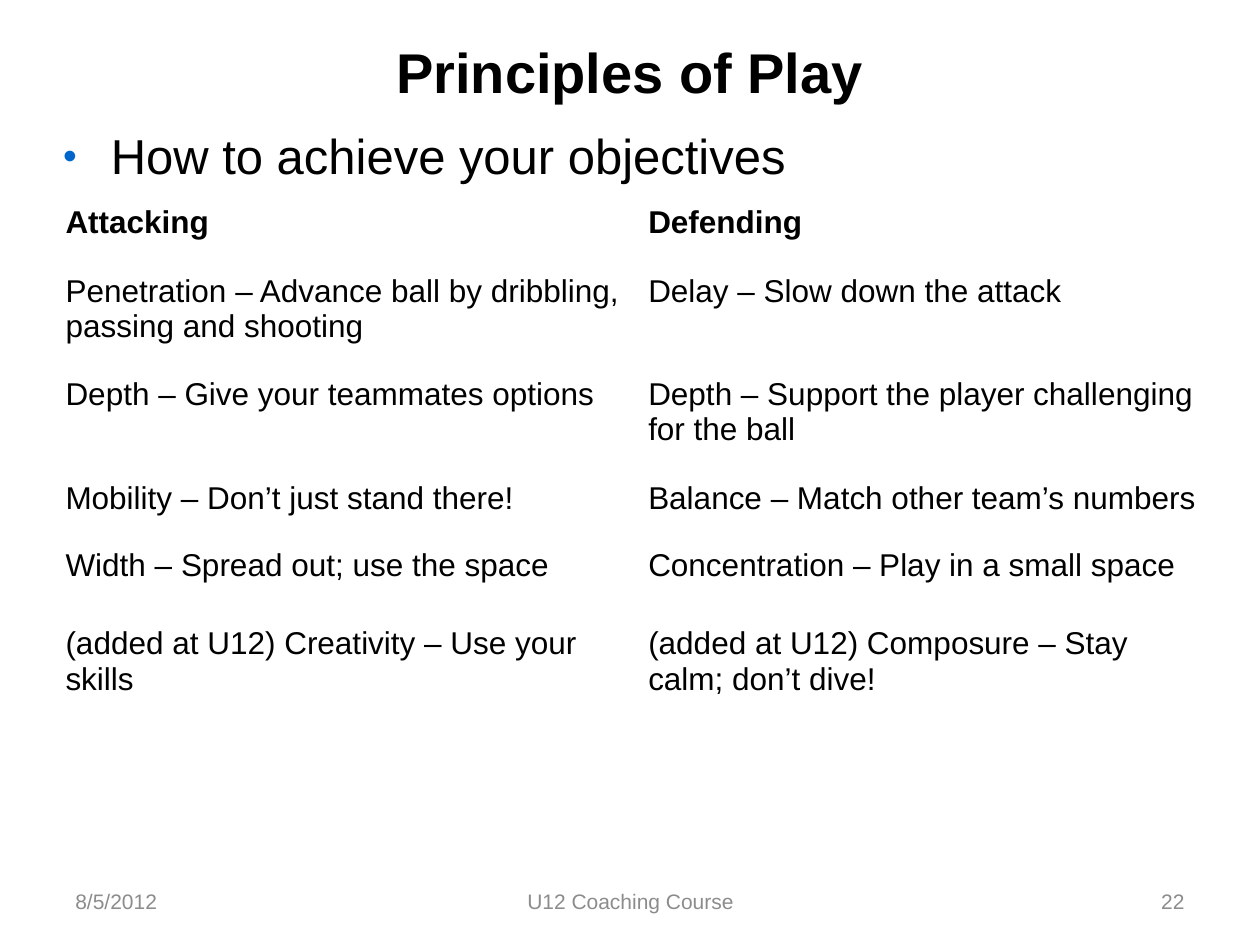
from lxml import etree
from pptx import Presentation
from pptx.dml.color import RGBColor
from pptx.enum.text import MSO_ANCHOR, PP_ALIGN
from pptx.oxml.ns import qn
from pptx.util import Inches, Pt

BLACK = RGBColor(0x00, 0x00, 0x00)
WHITE = RGBColor(0xFF, 0xFF, 0xFF)
GRAY = RGBColor(0x8C, 0x8C, 0x8C)
BLUE = RGBColor(0x00, 0x66, 0xCC)

TITLE = {"size": Pt(32), "bold": True}
BODY = {"size": Pt(28)}
HEADING = {"size": Pt(18), "bold": True}
CELL = {"size": Pt(18), "bold": False}
FOOTER = {"size": Pt(12)}

# Top, height, attacking text, defending text, text format
PRINCIPLES = [
    (1.58, 0.41, "Attacking", "Defending", HEADING),
    (2.12, 0.7, "Penetration – Advance ball by dribbling, passing and shooting",
     "Delay – Slow down the attack", CELL),
    (2.94, 0.7, "Depth – Give your teammates options",
     "Depth – Support the player challenging for the ball", CELL),
    (3.77, 0.41, "Mobility – Don’t just stand there!",
     "Balance – Match other team’s numbers", CELL),
    (4.3, 0.41, "Width – Spread out; use the space",
     "Concentration – Play in a small space", CELL),
    (4.92, 0.7, "(added at U12) Creativity – Use your skills",
     "(added at U12) Composure – Stay calm; don’t dive!", CELL),
]
BORDERS = {"a:lnL": 1, "a:lnR": 1, "a:lnT": 1, "a:lnB": 3}


def format_font(paragraph, values, color=BLACK):
    paragraph.font.name = "Arial"
    paragraph.font.color.rgb = color
    for name, value in values.items():
        setattr(paragraph.font, name, value)


def add_text(slide, box, text, anchor, inset=True):
    """Add a wrapping text box and return its paragraph."""
    frame = slide.shapes.add_textbox(*map(Inches, box)).text_frame
    frame.word_wrap = True
    frame.vertical_anchor = anchor
    if not inset:
        for side in ("left", "top", "right", "bottom"):
            setattr(frame, f"margin_{side}", 0)
    paragraph = frame.paragraphs[0]
    paragraph.text = text
    return paragraph


def add_title(slide, box):
    paragraph = add_text(slide, box, "Principles of Play", MSO_ANCHOR.MIDDLE, inset=False)
    paragraph.alignment = PP_ALIGN.CENTER
    format_font(paragraph, TITLE)


def add_body(slide, box):
    paragraph = add_text(slide, box, "How to achieve your objectives", MSO_ANCHOR.TOP, inset=False)
    # Hanging blue bullet
    properties = paragraph._p.get_or_add_pPr()
    properties.set("marL", str(Inches(0.38)))
    properties.set("indent", str(-Inches(0.38)))
    bullet_color = etree.SubElement(properties, qn("a:buClr"))
    etree.SubElement(bullet_color, qn("a:srgbClr"), val=str(BLUE))
    etree.SubElement(properties, qn("a:buSzPct"), val="80000")
    etree.SubElement(properties, qn("a:buFont"), typeface="Arial")
    etree.SubElement(properties, qn("a:buChar"), char="•")
    format_font(paragraph, BODY)


def add_borders(cell):
    properties = cell._tc.get_or_add_tcPr()
    for tag, width in BORDERS.items():
        line = etree.SubElement(properties, qn(tag), w=str(Pt(width)))
        fill = etree.SubElement(line, qn("a:solidFill"))
        etree.SubElement(fill, qn("a:srgbClr"), val=str(WHITE))


def add_principle(slide, box, texts, values):
    """Add a one-row table pairing an attacking and a defending principle."""
    table = slide.shapes.add_table(1, len(texts), *map(Inches, box)).table
    table.first_row = False
    table.horz_banding = False
    for cell, text in zip(table.rows[0].cells, texts):
        cell.text = text
        format_font(cell.text_frame.paragraphs[0], values)
        add_borders(cell)
        cell.fill.background()


def add_footer(slide, top, height):
    parts = [
        (0.5, 2.33, "8/5/2012", PP_ALIGN.LEFT),
        (3.42, 3.17, "U12 Coaching Course", PP_ALIGN.CENTER),
        (7.17, 2.33, "22", PP_ALIGN.RIGHT),
    ]
    for left, width, text, alignment in parts:
        paragraph = add_text(slide, (left, top, width, height), text, MSO_ANCHOR.MIDDLE)
        paragraph.alignment = alignment
        format_font(paragraph, FOOTER, GRAY)


def main():
    presentation = Presentation()
    presentation.slide_width = Inches(10)
    presentation.slide_height = Inches(7.5)
    slide = presentation.slides.add_slide(presentation.slide_layouts[6])

    add_title(slide, (0.5, 0.3, 9, 0.53))
    add_body(slide, (0.5, 1, 9.25, 5.7))
    for top, height, attacking, defending, values in PRINCIPLES:
        add_principle(slide, (0.42, top, 9.25, height), (attacking, defending), values)
    add_footer(slide, 6.95, 0.4)

    presentation.save("out.pptx")


if __name__ == "__main__":
    main()
